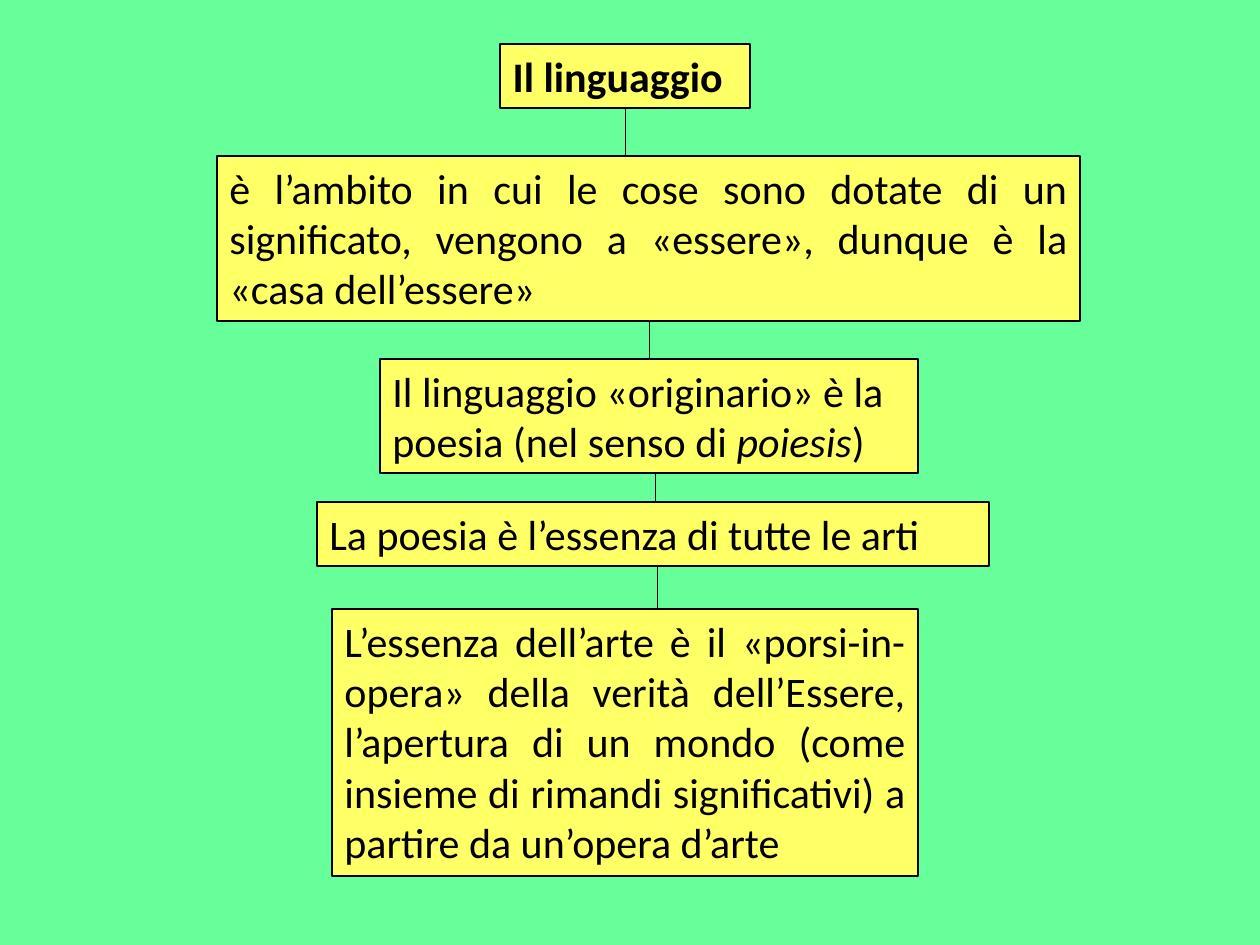
from lxml import etree
from pptx import Presentation
from pptx import util as u
from pptx.dml.color import RGBColor
from pptx.enum import shapes, text
from pptx.oxml.ns import qn

COLORS = {"background": "66FF99", "box": "FFFF66", "ink": "000000"}
LEFT, JUSTIFY = text.PP_ALIGN.LEFT, text.PP_ALIGN.JUSTIFY


def px(n):
    """Turn pixels (126 to the inch) into EMU."""
    return u.Emu(round(n * 914400 / 126))


def write(box, parts, align=LEFT, bold=False, size=24, font="Calibri"):
    """Fill the box with one paragraph of (wording, italic) parts."""
    frame = box.text_frame
    frame.word_wrap = True
    frame.auto_size = text.MSO_AUTO_SIZE.NONE
    frame.vertical_anchor = text.MSO_ANCHOR.TOP
    paragraph = frame.paragraphs[0]
    paragraph.alignment = align
    for wording, italic in parts:
        run = paragraph.add_run()
        run.text = wording
        run.font.name = font
        run.font.size = u.Pt(size)
        run.font.bold = bold
        run.font.italic = italic
        run.font.color.rgb = RGBColor.from_string(COLORS["ink"])


prs = Presentation()
prs.slide_width, prs.slide_height = px(1260), px(945)
slide = prs.slides.add_slide(prs.slide_layouts[5])
slide.background.fill.solid()
slide.background.fill.fore_color.rgb = RGBColor.from_string(COLORS["background"])

# left, top, width, height, alignment, parts
steps = [
    (500, 44, 250, 64, LEFT, [("Il linguaggio", False)]),
    (217, 156, 863, 165, JUSTIFY, [
        ("è l’ambito in cui le cose sono dotate di un significato, vengono a "
         "«essere», dunque è la «casa dell’essere»", False)]),
    (380, 359, 538, 114, LEFT, [
        ("Il linguaggio «originario» è la poesia (nel senso di ", False),
        ("poiesis", True), (")", False)]),
    (317, 502, 672, 64, LEFT, [("La poesia è l’essenza di tutte le arti", False)]),
    (332, 609, 586, 267, JUSTIFY, [
        ("L’essenza dell’arte è il «porsi-in-opera» della verità dell’Essere, "
         "l’apertura di un mondo (come insieme di rimandi significativi) a "
         "partire da un’opera d’arte", False)]),
]

for i, (left, top, width, height, align, parts) in enumerate(steps):
    if i == 0:
        step = slide.shapes.title
        step.left, step.top, step.width, step.height = map(px, (left, top, width, height))
    else:
        step = slide.shapes.add_shape(
            shapes.MSO_SHAPE.RECTANGLE, *map(px, (left, top, width, height)))
        step.shadow.inherit = False
    step.fill.solid()
    step.fill.fore_color.rgb = RGBColor.from_string(COLORS["box"])
    step.line.color.rgb = RGBColor.from_string(COLORS["ink"])
    step.line.width = u.Pt(0.75)
    write(step, parts, align=align, bold=i == 0)

# Each link runs from the bottom of one step to the top of the next.
for x, upper, lower in zip((625, 649, 655, 657), steps, steps[1:]):
    link = slide.shapes.add_connector(
        shapes.MSO_CONNECTOR.STRAIGHT,
        px(x), px(upper[1] + upper[3]), px(x), px(lower[1]))
    link.line.color.rgb = RGBColor.from_string(COLORS["ink"])
    link.line.width = u.Pt(0.25)
    etree.SubElement(link._element.spPr, qn("a:effectLst"))

prs.save("out.pptx")
